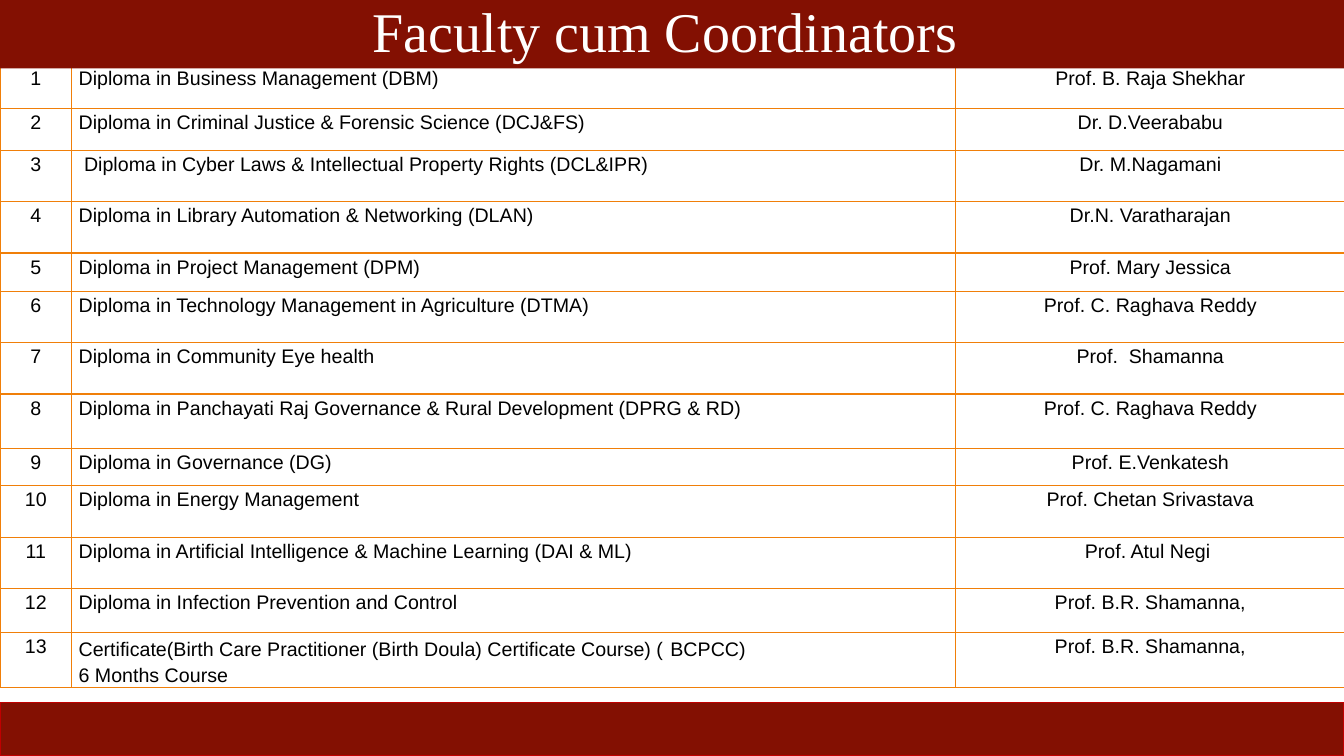
from dataclasses import dataclass

from lxml import etree
from pptx import Presentation
from pptx import util as u
from pptx.dml.color import RGBColor
from pptx.enum import shapes, text
from pptx.oxml import ns


@dataclass(frozen=True)
class Theme:
    maroon: str = "831002"
    red: str = "C00000"
    orange: str = "F07F09"
    white: str = "FFFFFF"
    black: str = "000000"
    title_font: str = "Times New Roman"
    body_font: str = "Arial"
    title_size: int = 40
    body_size: int = 14
    gap_size: int = 16
    line_width: int = 1


class SlideBuilder:
    def __init__(self, slide, theme):
        self.slide = slide
        self.theme = theme

    def paint(self, target, color):
        target.fill.solid()
        target.fill.fore_color.rgb = RGBColor.from_string(color)

    def style_paragraph(self, paragraph, font, size, color, align, spacing):
        paragraph.alignment = align
        paragraph.line_spacing = spacing
        for run in paragraph.runs:
            run.font.name = font
            run.font.size = u.Pt(size)
            run.font.color.rgb = RGBColor.from_string(color)

    def band(self, left, top, width, height):
        bar = self.slide.shapes.add_shape(
            shapes.MSO_SHAPE.RECTANGLE, *map(u.Inches, (left, top, width, height)))
        bar.shadow.inherit = False
        self.paint(bar, self.theme.maroon)
        bar.line.color.rgb = RGBColor.from_string(self.theme.red)
        bar.line.width = u.Pt(self.theme.line_width)

    def title(self, wording, left, top, width, height):
        heading = self.slide.shapes.title
        heading.left, heading.top, heading.width, heading.height = map(
            u.Inches, (left, top, width, height))
        self.paint(heading, self.theme.maroon)
        frame = heading.text_frame
        frame.text = wording
        frame.word_wrap = True
        frame.auto_size = text.MSO_AUTO_SIZE.NONE
        frame.vertical_anchor = text.MSO_ANCHOR.MIDDLE
        self.style_paragraph(frame.paragraphs[0], self.theme.title_font,
                             self.theme.title_size, self.theme.white,
                             text.PP_ALIGN.CENTER, 0.9)
        # The heading overlaps the top edge of the table
        self.slide.shapes._spTree.append(heading._element)

    def cell_borders(self, cell):
        properties = cell._tc.get_or_add_tcPr()
        for position, side in enumerate(("lnL", "lnR", "lnT", "lnB")):
            line = etree.Element(ns.qn(f"a:{side}"),
                                 w=str(u.Pt(self.theme.line_width)))
            fill = etree.SubElement(line, ns.qn("a:solidFill"))
            etree.SubElement(fill, ns.qn("a:srgbClr"), val=self.theme.orange)
            properties.insert(position, line)

    def cell(self, cell, wording, align, inset):
        self.paint(cell, self.theme.white)
        self.cell_borders(cell)
        cell.margin_left = cell.margin_right = u.Inches(inset)
        cell.margin_top = cell.margin_bottom = 0
        cell.text_frame.text = wording
        for paragraph in cell.text_frame.paragraphs:
            self.style_paragraph(paragraph, self.theme.body_font,
                                 self.theme.body_size, self.theme.black,
                                 align, 1.15)

    def table(self, left, top, widths, heights, rows, aligns, insets):
        grid = self.slide.shapes.add_table(
            len(rows), len(widths), u.Inches(left), u.Inches(top),
            u.Inches(sum(widths)), u.Inches(sum(heights))).table
        grid.first_row = grid.horz_banding = False
        for column, width in zip(grid.columns, widths):
            column.width = u.Inches(width)
        for row, height, wordings in zip(grid.rows, heights, rows):
            row.height = u.Inches(height)
            for cell, wording, align, inset in zip(row.cells, wordings, aligns, insets):
                self.cell(cell, wording, align, inset)
        return grid

    def append_runs(self, paragraph, sized_pieces):
        for piece, size in sized_pieces:
            run = paragraph.add_run()
            run.text = piece
            run.font.name = self.theme.body_font
            run.font.size = u.Pt(size)
            run.font.color.rgb = RGBColor.from_string(self.theme.black)


# Course, coordinator and row height
COURSES = [
    ("Diploma in Business Management (DBM)", "Prof. B. Raja Shekhar", 0.44),
    ("Diploma in Criminal Justice & Forensic Science (DCJ&FS)", "Dr. D.Veerababu", 0.41),
    (" Diploma in Cyber Laws & Intellectual Property Rights (DCL&IPR)", "Dr. M.Nagamani", 0.51),
    ("Diploma in Library Automation & Networking (DLAN)", "Dr.N. Varatharajan", 0.51),
    ("Diploma in Project Management (DPM)", "Prof. Mary Jessica", 0.38),
    ("Diploma in Technology Management in Agriculture (DTMA)", "Prof. C. Raghava Reddy", 0.51),
    ("Diploma in Community Eye health", "Prof.  Shamanna", 0.51),
    ("Diploma in Panchayati Raj Governance & Rural Development (DPRG & RD)",
     "Prof. C. Raghava Reddy", 0.54),
    ("Diploma in Governance (DG)", "Prof. E.Venkatesh", 0.37),
    ("Diploma in Energy Management", "Prof. Chetan Srivastava", 0.51),
    ("Diploma in Artificial Intelligence & Machine Learning (DAI & ML)",
     "Prof. Atul Negi ", 0.51),
    ("Diploma in Infection Prevention and Control", "Prof. B.R. Shamanna,", 0.44),
    ("Certificate(Birth Care Practitioner (Birth Doula) Certificate Course) (\n"
     "6 Months Course", "Prof. B.R. Shamanna,", 0.54),
]


def main():
    theme = Theme()
    deck = Presentation()
    deck.slide_width, deck.slide_height = u.Inches(13.33), u.Inches(7.5)
    builder = SlideBuilder(deck.slides.add_slide(deck.slide_layouts[5]), theme)

    # Footer band
    builder.band(0, 6.97, 13.33, 0.53)

    # Coordinator table
    center, left = text.PP_ALIGN.CENTER, text.PP_ALIGN.LEFT
    rows = [(str(number), course, coordinator)
            for number, (course, coordinator, _) in enumerate(COURSES, 1)]
    coordinators = builder.table(
        0, 0.64, (0.71, 8.77, 3.86), [height for *_, height in COURSES],
        rows, (center, left, center), (0.06, 0.07, 0.07))

    # Abbreviation of the certificate course, after a wider gap
    certificate = coordinators.cell(len(rows) - 1, 1).text_frame.paragraphs[0]
    builder.append_runs(certificate, [(" ", theme.gap_size), ("BCPCC)", theme.body_size)])

    # Title band
    builder.title("Faculty cum Coordinators ", 0, 0, 13.33, 0.68)

    deck.save("out.pptx")


if __name__ == "__main__":
    main()
